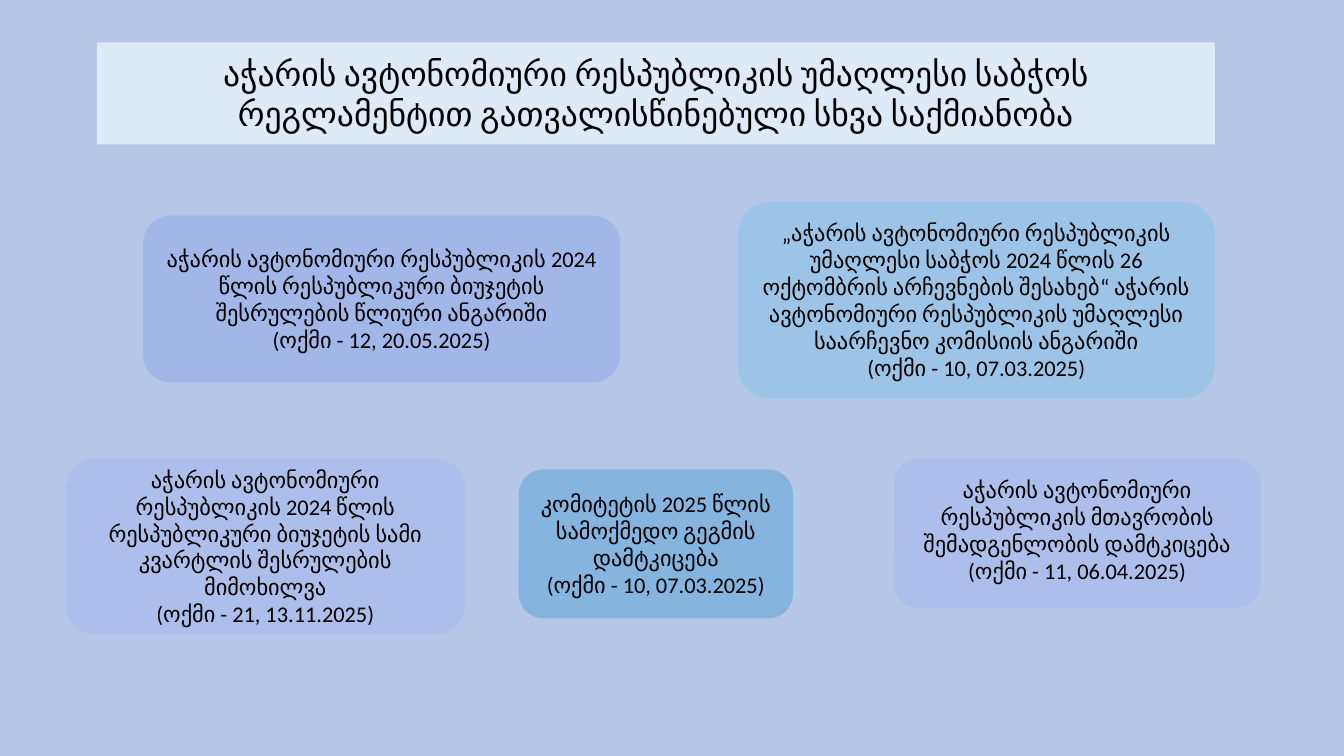
"""Builds a slide of five rounded cards on other council work under a title panel."""
from pptx import Presentation
from pptx.dml.color import RGBColor
from pptx.enum.shapes import MSO_SHAPE
from pptx.enum.text import MSO_ANCHOR, MSO_AUTO_SIZE, PP_ALIGN
from pptx.oxml.xmlchemy import OxmlElement
from pptx.util import Inches, Pt

ROUND = MSO_SHAPE.ROUNDED_RECTANGLE
MIDDLE = MSO_ANCHOR.MIDDLE
NO_FIT = MSO_AUTO_SIZE.NONE
CENTER = PP_ALIGN.CENTER

THEME = {
    "font": "Calibri", "title": Pt(24), "card": Pt(16),
    "ink": "000000", "back": "B4C7E7", "panel": "DEEBF7",
    "iris": "A1B7E7", "sky": "9DC3E6", "steel": "85B4DF", "lilac": "ACBFEA",
}

deck = Presentation()
deck.slide_width, deck.slide_height = Inches(13.33), Inches(7.5)
COL, ROW = deck.slide_width / 100, deck.slide_height / 100
slide = deck.slides.add_slide(deck.slide_layouts[5])
slide.background.fill.solid()
slide.background.fill.fore_color.rgb = RGBColor.from_string(THEME["back"])


def style(shape, fill, lines, size):
    """Fill a shape and set its centred text."""
    shape.fill.solid()
    shape.fill.fore_color.rgb = RGBColor.from_string(THEME[fill])
    shape.line.fill.background()
    frame = shape.text_frame
    frame.text = "\n".join(lines)
    frame.word_wrap = True
    frame.auto_size = NO_FIT
    frame.vertical_anchor = MIDDLE
    for para in frame.paragraphs:
        para.alignment = CENTER
        for run in para.runs:
            run.font.name = THEME["font"]
            run.font.size = THEME[size]
            run.font.color.rgb = RGBColor.from_string(THEME["ink"])


title = slide.shapes.title
title.left, title.top = int(7.2 * COL), int(5.6 * ROW)
title.width, title.height = int(83.2 * COL), int(13.5 * ROW)
outline = OxmlElement("a:prstGeom")
outline.set("prst", "roundRect")
outline.append(OxmlElement("a:avLst"))
title.element.spPr.append(outline)
style(title, "panel", ["აჭარის ავტონომიური რესპუბლიკის უმაღლესი საბჭოს "
                       "რეგლამენტით გათვალისწინებული სხვა საქმიანობა"], "title")

CARDS = [
    (10.65, 28.5, 35.5, 22.1, "iris",
     "აჭარის ავტონომიური რესპუბლიკის 2024 წლის რესპუბლიკური ბიუჯეტის "
     "შესრულების წლიური ანგარიში", "(ოქმი - 12, 20.05.2025)"),
    (54.9, 26.7, 35.5, 26, "sky",
     "„აჭარის ავტონომიური რესპუბლიკის უმაღლესი საბჭოს 2024 წლის 26 "
     "ოქტომბრის არჩევნების შესახებ“ აჭარის ავტონომიური რესპუბლიკის "
     "უმაღლესი საარჩევნო კომისიის ანგარიში", "(ოქმი - 10, 07.03.2025)"),
    (4.9, 60.7, 29.7, 23.2, "lilac",
     "აჭარის ავტონომიური რესპუბლიკის 2024 წლის რესპუბლიკური ბიუჯეტის "
     "სამი კვარტლის შესრულების მიმოხილვა", "(ოქმი - 21, 13.11.2025)"),
    (38.6, 62.1, 20.4, 19.7, "steel",
     "კომიტეტის 2025 წლის სამოქმედო გეგმის დამტკიცება",
     "(ოქმი - 10, 07.03.2025)"),
    (66.5, 60.7, 27.3, 19.7, "lilac",
     "აჭარის ავტონომიური რესპუბლიკის მთავრობის შემადგენლობის დამტკიცება",
     "(ოქმი - 11, 06.04.2025)"),
]
for left, top, width, height, fill, *lines in CARDS:
    card = slide.shapes.add_shape(ROUND, int(left * COL), int(top * ROW),
                                  int(width * COL), int(height * ROW))
    card.shadow.inherit = False
    style(card, fill, lines, "card")
card.text_frame.margin_bottom = Inches(0.12)

deck.save("out.pptx")
